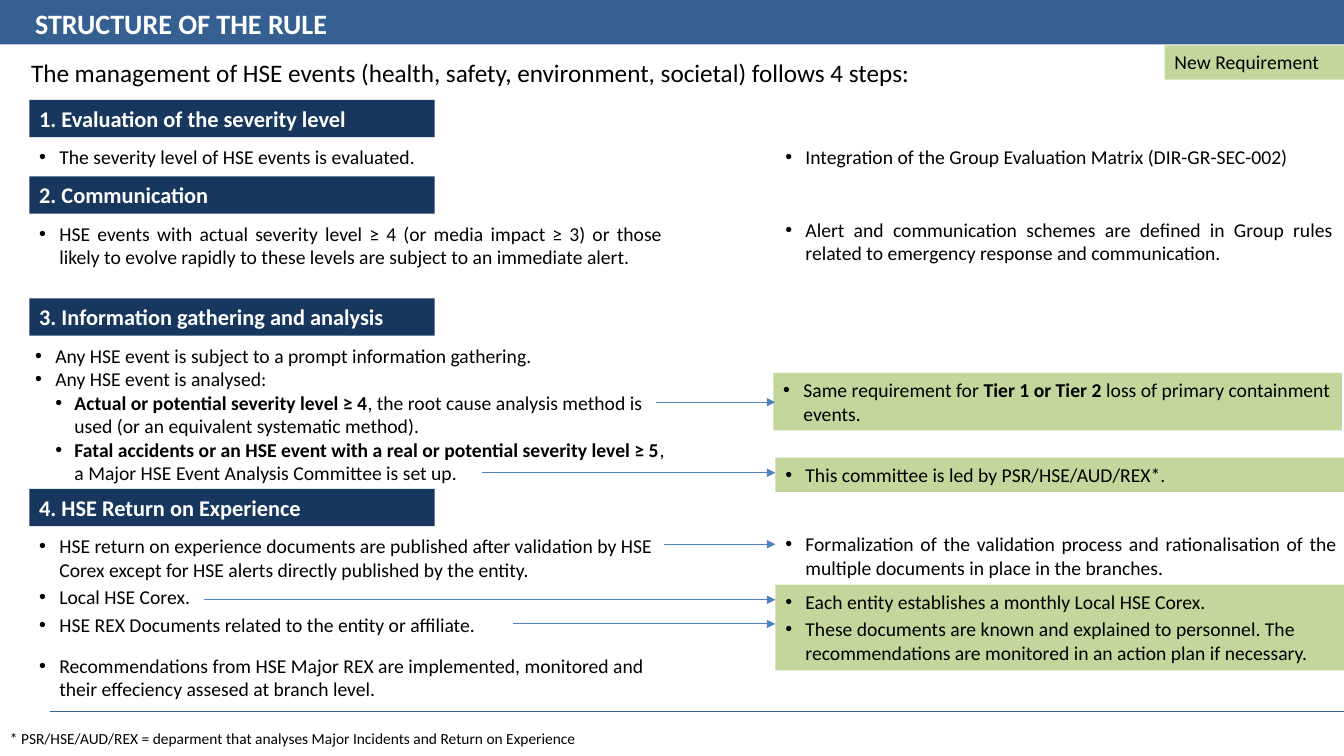
from collections import namedtuple

from lxml import etree
from pptx import Presentation
from pptx.dml.color import RGBColor
from pptx.enum.shapes import MSO_CONNECTOR, MSO_SHAPE
from pptx.enum.text import MSO_ANCHOR, PP_ALIGN
from pptx.oxml.ns import qn
from pptx.util import Inches, Pt

RECTANGLE = MSO_SHAPE.RECTANGLE
STRAIGHT = MSO_CONNECTOR.STRAIGHT
LEFT, JUSTIFY = PP_ALIGN.LEFT, PP_ALIGN.JUSTIFY
TOP, MIDDLE = MSO_ANCHOR.TOP, MSO_ANCHOR.MIDDLE

BAR_BLUE = RGBColor(0x37, 0x60, 0x92)
NAVY = RGBColor(0x17, 0x37, 0x5E)
ARROW_BLUE = RGBColor(0x4F, 0x81, 0xBD)
GREEN = RGBColor(0xC3, 0xD6, 0x9B)
BLACK = RGBColor(0, 0, 0)
WHITE = RGBColor(0xFF, 0xFF, 0xFF)

FONT = "Calibri"
WIDTH, HEIGHT = 13.33, 7.5
MARGIN = 0.29
NOTE_COLUMN = 7.4  # from the left edge of a step
HEADING_WIDTH, HEADING_HEIGHT = 4.02, 0.37
BODY_OFFSET = 0.4
BULLET_INDENTS = {1: (0.2, 0.2), 2: (0.39, 0.19)}  # level: margin, hanging

Box = namedtuple("Box", "left top width height")
# Odd pieces between "|" marks in the text are bold.
Item = namedtuple("Item", "text level after", defaults=(1, 0))
Body = namedtuple("Body", "items width height shift align", defaults=(0, LEFT))
# Tops of notes and arrows are measured from the top of their step.
Note = namedtuple("Note", "items top width height fill shift align", defaults=(None, 0, LEFT))
Arrow = namedtuple("Arrow", "start top")

STEPS = [
    (0.99, "1. Evaluation of the severity level",
     Body([Item("The severity level of HSE events is evaluated.")], 6.61, 0.34),
     [Note([Item("Integration of the Group Evaluation Matrix (DIR-GR-SEC-002)")],
           0.4, 5.64, 0.34)],
     []),
    (1.75, "2. Communication",
     Body([Item("HSE events with actual severity level ≥ 4 (or media impact ≥ 3) or those "
                "likely to evolve rapidly to these levels are subject to an immediate alert.")],
          6.38, 0.57, align=JUSTIFY),
     [Note([Item("Alert and communication schemes are defined in Group rules "
                 "related to emergency response and communication.")],
           0.36, 5.63, 0.57, align=JUSTIFY)],
     []),
    (2.96, "3. Information gathering and analysis",
     Body([Item("Any HSE event is subject to a prompt information gathering."),
           Item("Any HSE event is analysed:"),
           Item("|Actual or potential severity level ≥ 4|, the root cause analysis method "
                "is used (or an equivalent systematic method).", 2),
           Item("|Fatal accidents or an HSE event with a real or potential severity "
                "level ≥ 5|, a Major HSE Event Analysis Committee is set up.", 2)],
          6.54, 1.51, shift=-0.04),
     [Note([Item("Same requirement for |Tier 1 or Tier 2 |loss of primary containment events.")],
           0.74, 5.64, 0.57, GREEN, shift=-0.02),
      Note([Item("This committee is led by PSR/HSE/AUD/REX*.")], 1.58, 5.64, 0.34, GREEN)],
     [Arrow(6.22, 1.03), Arrow(4.49, 1.73)]),
    (4.85, "4. HSE Return on Experience",
     Body([Item("HSE return on experience documents are published after validation by HSE "
                "Corex except for HSE alerts directly published by the entity.", after=3),
           Item("Local HSE Corex.", after=3),
           Item("HSE REX Documents related to the entity or affiliate.", after=12),
           Item("Recommendations from HSE Major REX are implemented, monitored and "
                "their effeciency assesed at branch level.")],
          6.38, 1.77),
     [Note([Item("Formalization of the validation process and rationalisation of the "
                 "multiple documents in place in the branches.")],
           0.38, 5.67, 0.57, align=JUSTIFY),
      Note([Item("Each entity establishes a monthly Local HSE Corex.", after=3),
            Item("These documents are known and explained to personnel. The "
                 "recommendations are monitored in an action plan if necessary.")],
           0.95, 5.64, 0.85, GREEN)],
     [Arrow(6.3, 0.55), Arrow(1.73, 1.1), Arrow(4.8, 1.34)]),
]


def add_panel(slide, box, fill=None):
    """Add a filled rectangle, or a text box when there is no fill."""
    place = [Inches(length) for length in box]
    if fill is None:
        shape = slide.shapes.add_textbox(*place)
    else:
        shape = slide.shapes.add_shape(RECTANGLE, *place)
        shape.shadow.inherit = False
        shape.fill.solid()
        shape.fill.fore_color.rgb = fill
        shape.line.fill.background()
    shape.text_frame.word_wrap = True
    shape.text_frame.vertical_anchor = TOP
    return shape


def add_line(slide, start, end, color, arrow=False):
    points = [Inches(length) for length in (*start, *end)]
    line = slide.shapes.add_connector(STRAIGHT, *points)
    line.line.color.rgb = color
    line.line.width = Pt(0.75)
    if arrow:
        etree.SubElement(line.line._get_or_add_ln(), qn("a:tailEnd"), type="triangle")
    etree.SubElement(line._element.spPr, qn("a:effectLst"))


def format_runs(paragraph, size, color, bold=False):
    for run in paragraph.runs:
        run.font.name = FONT
        run.font.size = Pt(size)
        run.font.color.rgb = color
        run.font.bold = bold


def add_label(slide, box, text, size, color=BLACK, fill=None, bold=False):
    shape = add_panel(slide, box, fill)
    shape.text_frame.text = text
    paragraph = shape.text_frame.paragraphs[0]
    paragraph.alignment = LEFT
    format_runs(paragraph, size, color, bold)
    return shape


def add_bullet(paragraph, level):
    margin, hanging = BULLET_INDENTS[level]
    properties = paragraph._p.get_or_add_pPr()
    properties.set("marL", str(Inches(margin)))
    properties.set("indent", str(-Inches(hanging)))
    etree.SubElement(properties, qn("a:buFont"), typeface="Arial")
    etree.SubElement(properties, qn("a:buChar"), char="•")


def add_bullet_list(slide, box, items, align, fill=None):
    frame = add_panel(slide, box, fill).text_frame
    for index, item in enumerate(items):
        paragraph = frame.add_paragraph() if index else frame.paragraphs[0]
        add_bullet(paragraph, item.level)
        paragraph.alignment = align
        paragraph.space_after = Pt(item.after)
        for part, piece in enumerate(item.text.split("|")):
            if piece:
                run = paragraph.add_run()
                run.text = piece
                run.font.bold = part % 2 == 1
        for run in paragraph.runs:
            run.font.name = FONT
            run.font.size = Pt(14)
            run.font.color.rgb = BLACK


def add_header(slide, box):
    """Title bar, with the introduction and the colour key below it."""
    add_panel(slide, box, BAR_BLUE)
    title = add_label(slide, Box(box.left + 0.25, box.top + 0.05, 5.43, box.height),
                      "STRUCTURE OF THE RULE", 20, WHITE, bold=True)
    title.text_frame.paragraphs[0].line_spacing = 0.9
    bottom = box.top + box.height
    add_label(slide, Box(box.left + 0.21, bottom + 0.08, 11.2, 0.4),
              "The management of HSE events (health, safety, environment, societal) "
              "follows 4 steps:", 18)
    key_width = 1.78
    add_label(slide, Box(box.left + box.width - key_width, bottom + 0.01, key_width, 0.34),
              "New Requirement", 14, fill=GREEN)


def add_step(slide, box, heading, body, notes, arrows):
    """Heading and body on the left, notes on the right, arrows between them."""
    add_label(slide, Box(box.left, box.top, HEADING_WIDTH, HEADING_HEIGHT),
              heading, 16, WHITE, NAVY, bold=True)
    add_bullet_list(slide, Box(box.left + body.shift, box.top + BODY_OFFSET,
                               body.width, body.height), body.items, body.align)
    note_left = box.left + NOTE_COLUMN
    for note in notes:
        add_bullet_list(slide, Box(note_left + note.shift, box.top + note.top,
                                   note.width, note.height), note.items, note.align, note.fill)
    for arrow in arrows:
        level = box.top + arrow.top
        add_line(slide, (box.left + arrow.start, level), (note_left, level), ARROW_BLUE, True)


def add_footer(slide, box):
    add_line(slide, (box.left + 0.5, box.top), (box.left + box.width, box.top), BAR_BLUE)
    footnote = add_label(slide, Box(box.left, box.top + 0.11, 5.88, 0.31),
                         "* PSR/HSE/AUD/REX = deparment that analyses Major Incidents "
                         "and Return on Experience", 11, fill=WHITE)
    footnote.text_frame.vertical_anchor = MIDDLE


def main():
    presentation = Presentation()
    presentation.slide_width = Inches(WIDTH)
    presentation.slide_height = Inches(HEIGHT)
    slide = presentation.slides.add_slide(presentation.slide_layouts[6])
    footer_top = 7.06
    add_header(slide, Box(0, 0, WIDTH, 0.44))
    bottoms = [step[0] for step in STEPS[1:]] + [footer_top]
    for (top, *content), bottom in zip(STEPS, bottoms):
        add_step(slide, Box(MARGIN, top, WIDTH - MARGIN, bottom - top), *content)
    add_footer(slide, Box(0, footer_top, WIDTH, HEIGHT - footer_top))
    presentation.save("out.pptx")


if __name__ == "__main__":
    main()
